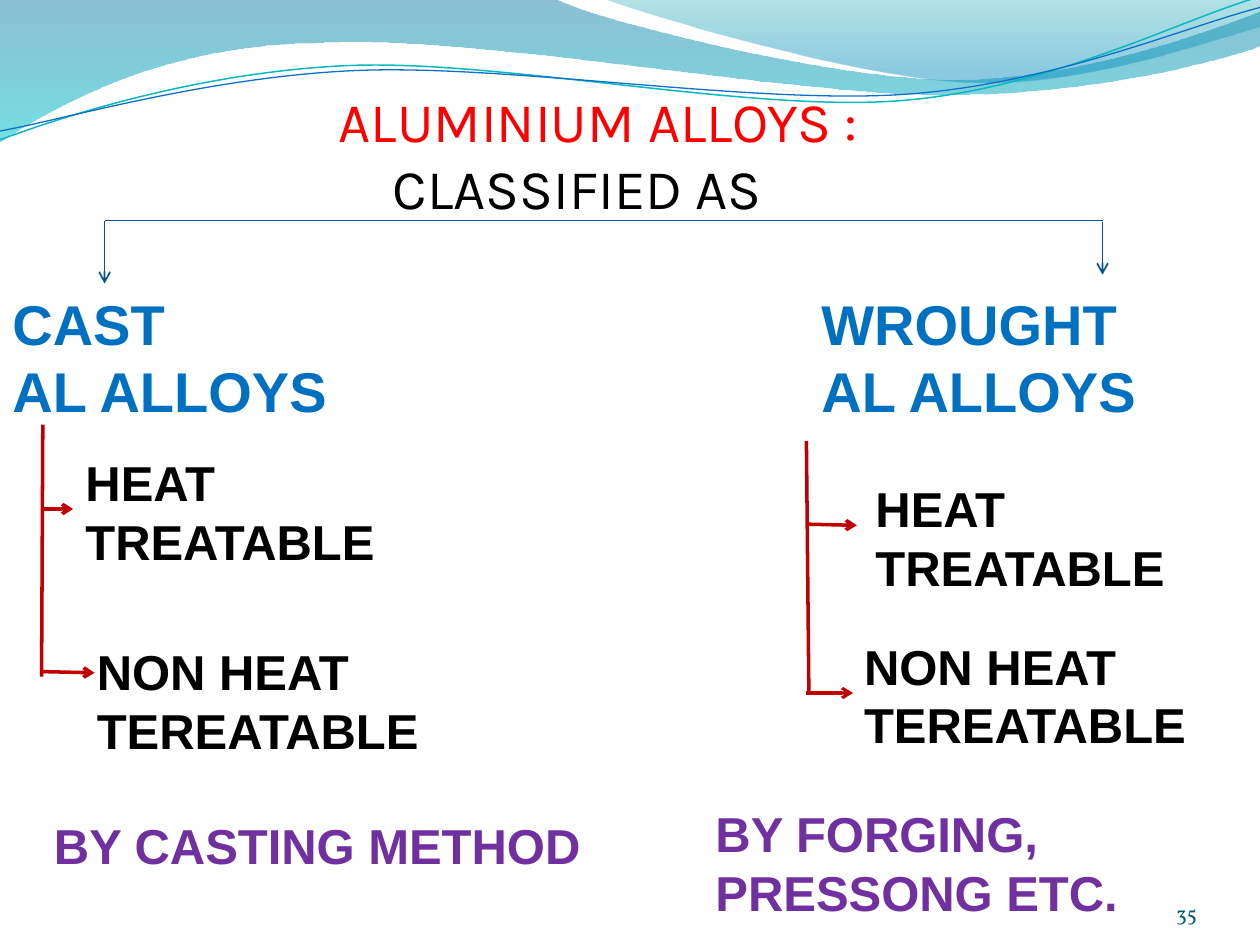
from dataclasses import dataclass
from math import cos, radians, sin

from lxml import etree
from pptx import Presentation
from pptx.dml.color import RGBColor
from pptx.enum.shapes import MSO_CONNECTOR
from pptx.enum.text import MSO_ANCHOR, PP_ALIGN
from pptx.oxml.ns import qn
from pptx.util import Inches, Pt

STRAIGHT = MSO_CONNECTOR.STRAIGHT
TOP, BOTTOM = MSO_ANCHOR.TOP, MSO_ANCHOR.BOTTOM
LEFT, RIGHT = PP_ALIGN.LEFT, PP_ALIGN.RIGHT


@dataclass(frozen=True)
class Theme:
    title: str = "FF0000"
    ink: str = "000000"
    family: str = "0070C0"
    method: str = "7030A0"
    number: str = "045D75"
    bracket: str = "095295"
    branch: str = "C00000"
    teal_wave: str = "0AB8BF"
    blue_wave: str = "0F6FC6"
    title_font: str = "Karla"
    body_font: str = "Arial"
    number_font: str = "Vollkorn"
    large: int = 32
    medium: int = 28
    small: int = 12


THEME = Theme()

prs = Presentation()
prs.slide_width, prs.slide_height = Inches(10), Inches(7.5)
slide = prs.slides.add_slide(prs.slide_layouts[6])
shapes = slide.shapes


def add_wave(start, segments, closed, center=(0, 0), tilt=0):
    """Outline of straight (x, y) and cubic (x1, y1, x2, y2, x, y) segments."""
    points = [start] + [s[i:i + 2] for s in segments for i in range(0, len(s), 2)]
    c, s = cos(radians(tilt)), sin(radians(tilt))
    offsets = [(x - center[0], y - center[1]) for x, y in points]
    outline = [(Inches(center[0] + dx * c + dy * s), Inches(center[1] - dx * s + dy * c))
               for dx, dy in offsets]
    builder = shapes.build_freeform(*outline[0])
    builder.add_line_segments(outline[1:], close=closed)
    wave = builder.convert_to_shape()
    wave.shadow.inherit = False
    wave.rotation = tilt
    # Join each three line points of a cubic segment into one curve
    steps = iter(list(wave._element.spPr.iter(qn("a:lnTo"))))
    for segment in segments:
        step = next(steps)
        if len(segment) == 6:
            step.tag = qn("a:cubicBezTo")
            for extra in (next(steps), next(steps)):
                step.append(extra[0])
                extra.getparent().remove(extra)
    return wave


def add_text(box, lines, size, color, font=THEME.body_font, bold=True,
             align=LEFT, anchor=TOP, margins=(0.1, 0.05)):
    """Text box; each line is a string or (string, indent, color)."""
    frame = shapes.add_textbox(*map(Inches, box)).text_frame
    side, edge = map(Inches, margins)
    frame_format = {"word_wrap": True, "vertical_anchor": anchor,
                    "margin_left": side, "margin_right": side,
                    "margin_top": edge, "margin_bottom": edge}
    for name, value in frame_format.items():
        setattr(frame, name, value)
    for index, line in enumerate(lines):
        words, indent, line_color = (line, 0, color) if isinstance(line, str) else line
        paragraph = frame.paragraphs[0] if index == 0 else frame.add_paragraph()
        paragraph.alignment = align
        if indent:
            properties = paragraph._p.get_or_add_pPr()
            properties.set("marL", str(Inches(indent)))
            properties.set("indent", "0")
        run = paragraph.add_run()
        run.text = words
        for name, value in {"name": font, "size": Pt(size), "bold": bold}.items():
            setattr(run.font, name, value)
        run.font.color.rgb = RGBColor.from_string(line_color)


# Header bands: gradient stops are (position, color, opacity in percent)
bands = [
    ((0, -0.01),
     [(4.4, -0.01), (4.76, 0.17, 6.64, 0.63, 7.58, 0.63),
      (8.53, 0.63, 9.58, 0.26, 10, 0.09), (10.01, 0.36),
      (9.83, 0.44, 8.7, 0.76, 7.46, 0.75), (6.22, 0.75, 3.82, 0.28, 2.57, 0.34),
      (1.29, 0.35, 0.46, 0.83, -0.01, 1.13)],
     [(0, "0074A1", 45), (1, "00C6CF", 55)]),
    ((4.79, -0.01),
     [(5.09, 0.11, 6.82, 0.62, 7.69, 0.65), (8.56, 0.69, 9.61, 0.32, 10, 0.21),
      (10, 0)],
     [(0, "00A1A9", 30), (0.8, "008BBF", 45)]),
]
for start, segments, stops in bands:
    band = add_wave(start, segments, closed=True)
    band.line.fill.background()
    band.fill.gradient()
    band.fill.gradient_angle = 270
    for stop, (position, color, opacity) in zip(band.fill.gradient_stops, stops):
        stop.position = position
        stop.color.rgb = RGBColor.from_string(color)
    for node, (_, _, opacity) in zip(band._element.spPr.iter(qn("a:srgbClr")), stops):
        etree.SubElement(node, qn("a:alpha"), val=str(opacity * 1000))

# Header wave lines
waves = [
    ((0, 1.11), [(0.48, 0.93, 1.58, 0.57, 2.77, 0.52), (3.95, 0.47, 5.93, 0.89, 7.13, 0.8),
                 (8.33, 0.71, 9.38, 0.15, 9.98, -0.02)], (4.99, 0.58), THEME.teal_wave, 0.85),
    ((0, 1.04), [(0.47, 0.96, 1.64, 0.61, 2.83, 0.56), (4.03, 0.51, 5.97, 0.83, 7.17, 0.75),
                 (8.36, 0.67, 9.41, 0.21, 10, 0.06)], (5, 0.59), THEME.blue_wave, 0.75),
]
for start, segments, center, color, width in waves:
    wave = add_wave(start, segments, closed=False, center=center, tilt=357.3)
    wave.fill.background()
    wave.line.color.rgb = RGBColor.from_string(color)
    wave.line.width = Pt(width)

# Title
add_text((1.75, 0.08, 7.25, 1.72),
         [("ALUMINIUM ALLOYS :", 0.84, THEME.title), ("CLASSIFIED AS", 1.27, THEME.ink)],
         THEME.large, THEME.ink, font=THEME.title_font, bold=False, anchor=BOTTOM)

# Bracket under the title and branches below each family
bracket, branch = (THEME.bracket, 1), (THEME.branch, 2)
links = [
    ((0.83, 1.75), (8.75, 1.75), bracket, False),
    ((0.83, 1.75), (0.83, 2.25), bracket, True),
    ((8.75, 1.76), (8.75, 2.18), bracket, True),
    ((0.34, 3.37), (0.33, 5.37), branch, False),
    ((0.33, 4.04), (0.58, 4.04), branch, True),
    ((0.33, 5.33), (0.75, 5.34), branch, True),
    ((6.4, 3.5), (6.42, 5.5), branch, False),
    ((6.4, 4.16), (6.8, 4.17), branch, True),
    ((6.4, 5.5), (6.77, 5.5), (THEME.branch, 1.75), True),
]
for start, end, (color, width), arrow in links:
    link = shapes.add_connector(STRAIGHT, *map(Inches, start + end))
    link.line.color.rgb = RGBColor.from_string(color)
    link.line.width = Pt(width)
    if arrow:
        etree.SubElement(link.line._get_or_add_ln(), qn("a:tailEnd"), type="arrow")
    etree.SubElement(link._element.spPr, qn("a:effectLst"))

# Alloy families
for box, family in [((0, 2.25, 4.33, 1.18), "CAST"), ((6.42, 2.25, 3.58, 1.18), "WROUGHT")]:
    add_text(box, [family, "AL ALLOYS"], THEME.large, THEME.family)

# Heat treatment groups and production methods
labels = [
    ((0.58, 3.54, 3, 1.04), "HEAT TREATABLE", THEME.ink),
    ((0.67, 5.04, 3.42, 1.04), "NON HEAT TEREATABLE", THEME.ink),
    ((6.85, 3.75, 2.73, 1.04), "HEAT TREATABLE", THEME.ink),
    ((6.76, 5, 2.9, 1.04), "NON HEAT TEREATABLE", THEME.ink),
    ((0.33, 6.42, 4.5, 0.57), "BY CASTING METHOD", THEME.method),
    ((5.58, 6.33, 4.17, 1.04), "BY FORGING, PRESSONG ETC.", THEME.method),
]
for box, label, color in labels:
    add_text(box, [label], THEME.medium, color)

# Slide number
add_text((8.67, 6.95, 0.83, 0.4), ["35"], THEME.small, THEME.number,
         font=THEME.number_font, bold=False, align=RIGHT, anchor=BOTTOM, margins=(0, 0))

prs.save("out.pptx")
